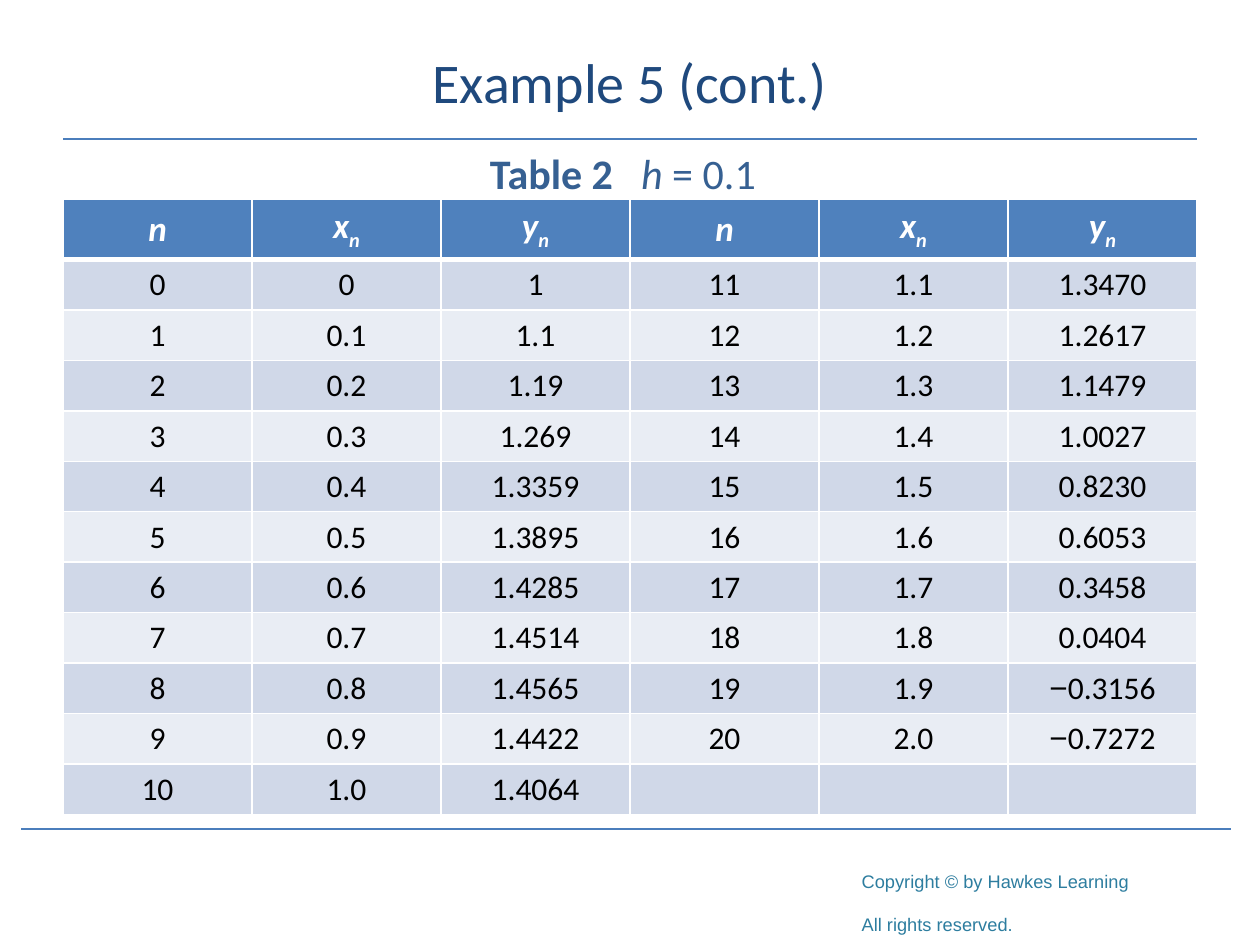
from dataclasses import dataclass

from lxml import etree
from pptx import Presentation
from pptx.dml.color import RGBColor
from pptx.enum.shapes import MSO_CONNECTOR
from pptx.enum.text import MSO_ANCHOR, PP_ALIGN
from pptx.oxml.ns import qn
from pptx.slide import Slide
from pptx.util import Inches, Pt

STRAIGHT = MSO_CONNECTOR.STRAIGHT
TOP, MIDDLE = MSO_ANCHOR.TOP, MSO_ANCHOR.MIDDLE
LEFT, CENTER = PP_ALIGN.LEFT, PP_ALIGN.CENTER
UNIT = 0.5

Y_VALUES = """1 1.1 1.19 1.269 1.3359 1.3895 1.4285 1.4514 1.4565 1.4422 1.4064
1.3470 1.2617 1.1479 1.0027 0.8230 0.6053 0.3458 0.0404 −0.3156 −0.7272""".split()


def color(value):
    return RGBColor.from_string(value)


def grid(count):
    return Inches(count * UNIT)


def write(paragraph, text, font="Calibri", size=18, fill="000000", bold=False,
          italic=False, baseline=0):
    run = paragraph.add_run()
    run.text = text
    run.font.name = font
    run.font.size = Pt(size)
    run.font.color.rgb = color(fill)
    run.font.bold = bold
    run.font.italic = italic
    if baseline:
        run.font._element.set("baseline", str(baseline * 1000))


def add_tab(paragraph, position):
    tabs = etree.SubElement(paragraph._p.get_or_add_pPr(), qn("a:tabLst"))
    etree.SubElement(tabs, qn("a:tab"), pos=str(Inches(position)), algn="l")


def add_border(cell, side, width, fill="FFFFFF"):
    properties = cell._tc.get_or_add_tcPr()
    line = etree.SubElement(properties, qn(f"a:ln{side}"), w=str(Pt(width)))
    solid = etree.SubElement(line, qn("a:solidFill"))
    etree.SubElement(solid, qn("a:srgbClr"), val=fill)


@dataclass
class StyledSlide:
    slide: Slide
    rule: str = "4B7EBC"
    header: str = "4F81BD"
    bands: tuple = ("E9EDF4", "D0D8E8")

    def add_rule(self, left, right, row):
        connector = self.slide.shapes.add_connector(
            STRAIGHT, grid(left), grid(row), grid(right), grid(row))
        connector.line.color.rgb = color(self.rule)
        connector.line.width = Pt(1.25)
        etree.SubElement(connector._element.spPr, qn("a:effectLst"))

    def add_text(self, left, top, width, height, paragraphs, anchor=TOP,
                 align=LEFT, spacing=None, tab=None, inset=0.05):
        box = self.slide.shapes.add_textbox(
            grid(left), grid(top), grid(width), grid(height))
        frame = box.text_frame
        frame.word_wrap = True
        frame.vertical_anchor = anchor
        frame.margin_top = Inches(inset)
        for index, runs in enumerate(paragraphs):
            paragraph = frame.add_paragraph() if index else frame.paragraphs[0]
            if tab:
                add_tab(paragraph, tab)
            paragraph.alignment = align
            if spacing:
                paragraph.line_spacing = Pt(spacing)
            for text, style in runs:
                write(paragraph, text, **style)

    def add_table(self, left, top, width, row_height, rows):
        columns = len(rows[0])
        frame = self.slide.shapes.add_table(
            len(rows), columns, grid(left), grid(top), grid(width),
            grid(row_height * len(rows)))
        table = frame.table
        table.first_row = table.horz_banding = False
        for column in table.columns:
            column.width = grid(width / columns)
        for row_index, values in enumerate(rows):
            table.rows[row_index].height = grid(row_height)
            for column_index, value in enumerate(values):
                self.fill_cell(table.cell(row_index, column_index), row_index, value)

    def fill_cell(self, cell, row_index, value):
        top_width = 3 if row_index == 1 else 1
        bottom_width = 3 if row_index == 0 else 1
        for side, width in zip("LRTB", (1, 1, top_width, bottom_width)):
            add_border(cell, side, width)
        cell.fill.solid()
        cell.fill.fore_color.rgb = color(
            self.bands[row_index % 2] if row_index else self.header)
        cell.vertical_anchor = MIDDLE
        paragraph = cell.text_frame.paragraphs[0]
        paragraph.alignment = CENTER
        if row_index == 0:
            heading = dict(size=20, fill="FFFFFF", bold=True, italic=True)
            write(paragraph, value[0], **heading)
            if value[1:]:
                write(paragraph, value[1:], baseline=-25, **heading)
            return
        if value.startswith("−"):
            write(paragraph, "−", font="Arial")
        if value:
            write(paragraph, value.lstrip("−"))


def table_rows():
    steps = [(str(n), f"{n / 10:.1f}" if n else "0", y)
             for n, y in enumerate(Y_VALUES)]
    half = 11
    right = steps[half:] + [("", "", "")]
    return [("n", "xn", "yn") * 2] + [a + b for a, b in zip(steps[:half], right)]


def main():
    presentation = Presentation()
    presentation.slide_width = grid(20)
    presentation.slide_height = grid(15)
    page = StyledSlide(presentation.slides.add_slide(presentation.slide_layouts[6]))

    page.add_rule(1, 19, 2.2)
    page.add_rule(0.34, 19.54, 13.16)

    notice = dict(font="Arial", fill="2D7D9F", baseline=-25)
    page.add_text(13.48, 12.8, 6.16, 2.14,
                  [[("Copyright © by Hawkes Learning", notice)],
                   [("All rights reserved.", notice)]], inset=0.34)
    page.add_text(1, 0.4, 18, 2,
                  [[("Example 5 (cont.)", dict(size=32, fill="1F497D"))]],
                  anchor=MIDDLE, align=CENTER, spacing=30)
    page.add_table(1, 3.16, 18, 0.8, table_rows())
    caption = dict(size=24, fill="366092")
    page.add_text(7.58, 2.24, 4.84, 1.16,
                  [[("Table 2\t", dict(caption, bold=True)),
                    ("h", dict(caption, italic=True)),
                    (" = 0.1", caption)]], tab=1.2)
    presentation.save("out.pptx")


if __name__ == "__main__":
    main()
